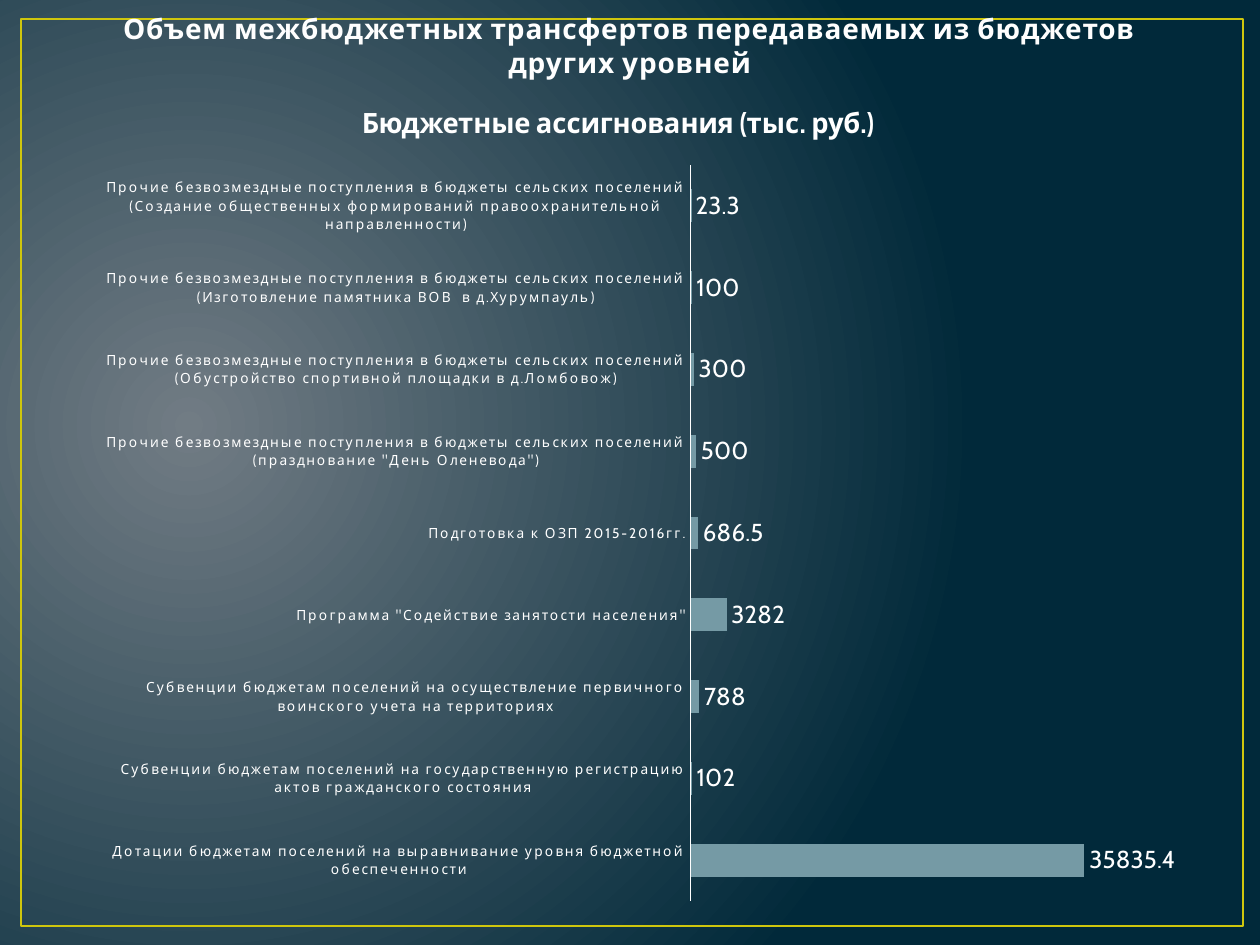
from dataclasses import dataclass

from lxml.etree import SubElement
from pptx import Presentation
from pptx.chart.data import CategoryChartData
from pptx.dml.color import RGBColor as Rgb
from pptx.enum.chart import XL_CHART_TYPE as ChartType
from pptx.enum.chart import XL_LABEL_POSITION as LabelPosition
from pptx.enum.chart import XL_TICK_MARK as TickMark
from pptx.enum.shapes import MSO_SHAPE as Shape
from pptx.enum.text import MSO_ANCHOR as Anchor
from pptx.enum.text import PP_ALIGN as Align
from pptx.oxml.ns import qn
from pptx.util import Pt

PX_PER_INCH = 126
EMU_PER_PX = 914400 / PX_PER_INCH


@dataclass(frozen=True)
class Theme:
    font: str = "Cabin"
    glow: str = "717C84"
    night: str = "01293A"
    frame: str = "CFC60D"
    heading: str = "FEFEFE"
    heading_edge: str = "384F55"
    text: str = "FFFFFF"
    bar: str = "759AA5"
    title_size: int = 16
    value_size: int = 14
    category_size: int = 8
    chart_size: int = 18


THEME = Theme()
TITLE = "Объем межбюджетных трансфертов передаваемых из бюджетов других уровней"
SERIES = "Бюджетные ассигнования (тыс. руб.)"
OTHER = "Прочие безвозмездные поступления в бюджеты сельских поселений"
TRANSFERS = [
    ("Дотации бюджетам поселений на выравнивание уровня бюджетной обеспеченности", 35835.4),
    ("Субвенции бюджетам поселений на государственную регистрацию актов "
     "гражданского состояния", 102),
    ("Субвенции бюджетам поселений на осуществление первичного воинского учета "
     "на территориях", 788),
    ('Программа "Содействие занятости населения"', 3282),
    ("Подготовка к ОЗП 2015-2016гг.", 686.5),
    (f'{OTHER} (празднование "День Оленевода")', 500),
    (f"{OTHER} (Обустройство спортивной площадки в д.Ломбовож)", 300),
    (f"{OTHER} (Изготовление памятника ВОВ  в д.Хурумпауль)", 100),
    (f"{OTHER} (Создание общественных формирований правоохранительной "
     "направленности)", 23.3),
]


def px(length):
    return round(length * EMU_PER_PX)


def emu_box(box):
    return [px(length) for length in box]


def apply(target, values):
    for name, value in values.items():
        setattr(target, name, value)


def style_font(font, size, color=THEME.text, bold=False):
    apply(font, {"name": THEME.font, "size": Pt(size), "bold": bold})
    font.color.rgb = Rgb.from_string(color)


def paint_background(slide):
    """Radial glow centred near the left edge."""
    fill = slide.background.fill
    fill.gradient()
    for stop, color, position in zip(fill.gradient_stops, (THEME.glow, THEME.night), (0, 1)):
        stop.color.rgb = Rgb.from_string(color)
        stop.position = position
    gradient = slide.element.find(".//" + qn("a:gradFill"))
    gradient.remove(gradient.find(qn("a:lin")))
    circle = SubElement(gradient, qn("a:path"), path="circle")
    SubElement(circle, qn("a:fillToRect"), l="15000", t="50000", r="85000", b="60000")


def add_frame(slide, box):
    frame = slide.shapes.add_shape(Shape.RECTANGLE, *emu_box(box))
    frame.shadow.inherit = False
    frame.fill.background()
    frame.line.color.rgb = Rgb.from_string(THEME.frame)
    frame.line.width = Pt(1.5)


def add_title(slide, box):
    text_frame = slide.shapes.add_textbox(*emu_box(box)).text_frame
    apply(text_frame, {"word_wrap": True, "vertical_anchor": Anchor.BOTTOM})
    paragraph = text_frame.paragraphs[0]
    paragraph.alignment = Align.CENTER
    run = paragraph.add_run()
    run.text = TITLE
    style_font(run.font, THEME.title_size, THEME.heading, bold=True)
    properties = run.font._element
    properties.set("spc", "50")
    edge = SubElement(properties, qn("a:ln"), w=str(Pt(1.05)))
    edge_fill = SubElement(edge, qn("a:solidFill"))
    SubElement(edge_fill, qn("a:srgbClr"), val=THEME.heading_edge)
    properties.insert(0, edge)


def add_transfer_chart(slide, box):
    names, amounts = zip(*TRANSFERS)
    data = CategoryChartData()
    data.categories = names
    data.add_series(SERIES, amounts)
    chart = slide.shapes.add_chart(ChartType.BAR_CLUSTERED, *emu_box(box), data).chart
    style_font(chart.font, THEME.chart_size)
    chart.has_legend = False

    chart.has_title = True
    heading = chart.chart_title.text_frame
    heading.text = SERIES
    style_font(heading.paragraphs[0].runs[0].font, THEME.title_size, bold=True)

    apply(chart.value_axis, {"visible": False, "has_major_gridlines": False})
    axis = chart.category_axis
    apply(axis, {"major_tick_mark": TickMark.NONE, "minor_tick_mark": TickMark.NONE,
                 "has_major_gridlines": False})
    axis.format.line.color.rgb = Rgb.from_string(THEME.text)
    axis.format.line.width = Pt(1)
    style_font(axis.tick_labels.font, THEME.category_size)
    axis.tick_labels.font._element.set("spc", "100")

    plot = chart.plots[0]
    apply(plot, {"gap_width": 150, "overlap": -25, "vary_by_categories": False,
                 "has_data_labels": True})
    apply(plot.data_labels, {"show_value": True, "position": LabelPosition.OUTSIDE_END})
    style_font(plot.data_labels.font, THEME.value_size)
    bars = plot.series[0].format.fill
    bars.solid()
    bars.fore_color.rgb = Rgb.from_string(THEME.bar)


def main():
    deck = Presentation()
    apply(deck, {"slide_width": px(1260), "slide_height": px(945)})
    slide = deck.slides.add_slide(deck.slide_layouts[6])
    paint_background(slide)
    add_frame(slide, (21, 19, 1222, 907))
    add_title(slide, (84, 37, 1092, 48))
    add_transfer_chart(slide, (85, 75, 1091, 843))
    deck.save("out.pptx")


if __name__ == "__main__":
    main()
